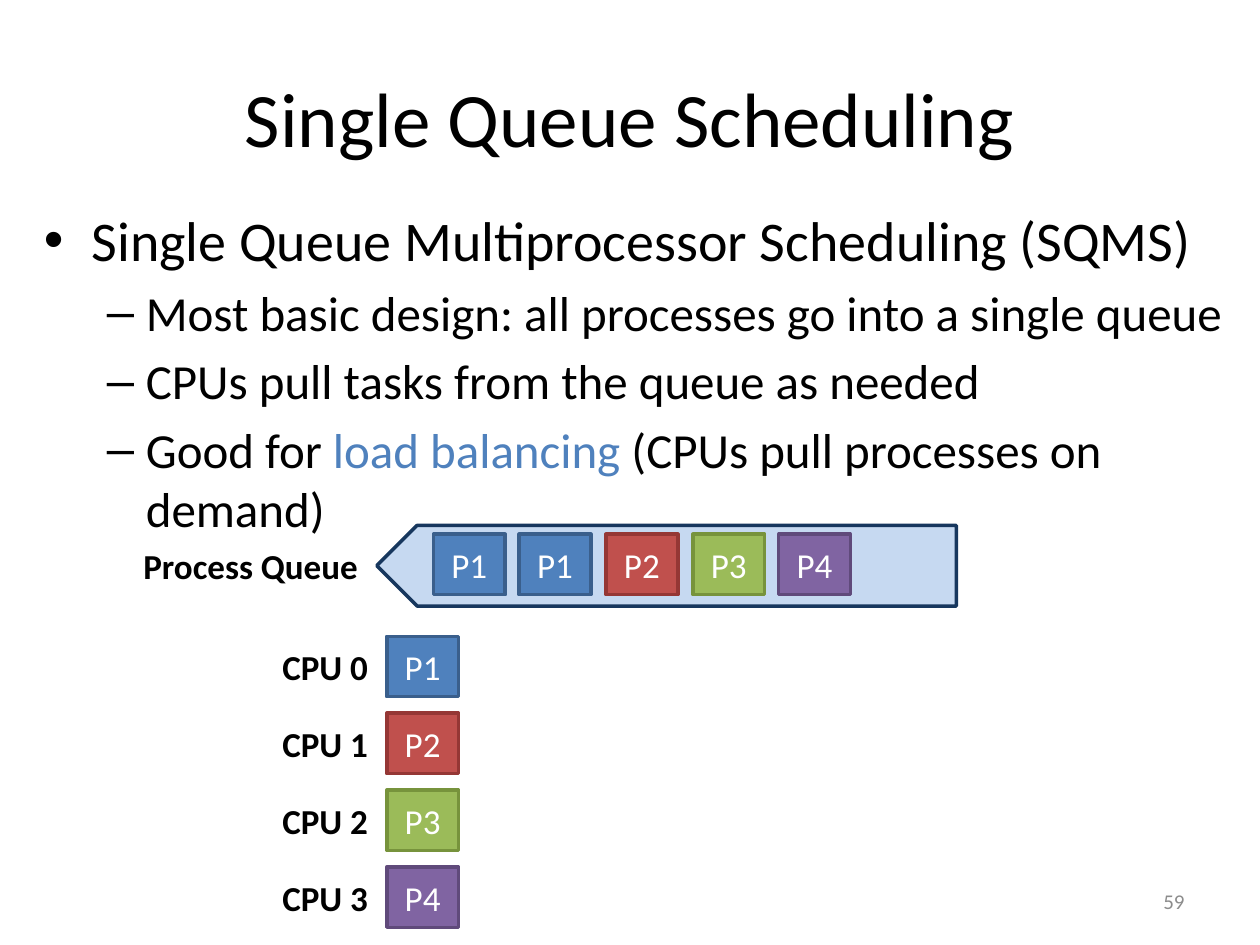
import pptx
import pptx.util
import pptx.dml.color
import pptx.enum.shapes
import pptx.enum.text
import lxml.etree

Inches = pptx.util.Inches
Pt = pptx.util.Pt
Shape = pptx.enum.shapes.MSO_SHAPE
Align = pptx.enum.text.PP_ALIGN
Anchor = pptx.enum.text.MSO_ANCHOR
rgb = pptx.dml.color.RGBColor.from_string

hues = {"black": "000000", "white": "FFFFFF", "grey": "8C8C8C", "blue": "4F81BD",
        "queue": "C6D9F1", "navy": "17375E"}
jobs = {"P1": ("4F81BD", "3A5F8C"), "P2": ("C0504D", "953735"),
        "P3": ("9BBB59", "77933C"), "P4": ("8064A2", "604A7B")}

deck = pptx.Presentation()
deck.slide_width, deck.slide_height = Inches(10), Inches(7.5)
slide = deck.slides.add_slide(deck.slide_layouts[5])
shapes = slide.shapes


def write(para, text, size, hue="black", bold=False):
    run = para.add_run()
    run.text = text
    run.font.name = "Calibri"
    run.font.size = Pt(size)
    run.font.bold = bold
    run.font.color.rgb = rgb(hues[hue])


def block(kind, left, top, width, height, fill, edge):
    shape = shapes.add_shape(kind, Inches(left), Inches(top), Inches(width), Inches(height))
    shape.shadow.inherit = False
    shape.fill.solid()
    shape.fill.fore_color.rgb = rgb(fill)
    shape.line.color.rgb = rgb(edge)
    shape.line.width = Pt(2)
    return shape


title = shapes.title
title.left, title.top = Inches(0.5), Inches(0.3)
title.width, title.height = Inches(9), Inches(1.25)
title.text_frame.vertical_anchor = Anchor.MIDDLE
title.text_frame.paragraphs[0].alignment = Align.CENTER
write(title.text_frame.paragraphs[0], "Single Queue Scheduling", 44)

points = [
    (0, [("Single Queue Multiprocessor Scheduling (SQMS)", "black")]),
    (1, [("Most basic design: all processes go into a single queue", "black")]),
    (1, [("CPUs pull tasks from the queue as needed", "black")]),
    (1, [("Good for ", "black"), ("load balancing ", "blue"),
         ("(CPUs pull processes on demand)", "black")]),
]
levels = [(32, "•", 0.38, -0.38), (28, "–", 0.81, -0.31)]
body = shapes.add_textbox(Inches(0.25), Inches(1.58), Inches(9.57), Inches(2.6)).text_frame
body.word_wrap = True
for i, (level, runs) in enumerate(points):
    para = body.add_paragraph() if i else body.paragraphs[0]
    size, mark, left, indent = levels[level]
    para.level = level
    para.space_before = Pt(size * 0.2)
    props = para._p.get_or_add_pPr()
    props.set("marL", str(Inches(left)))
    props.set("indent", str(Inches(indent)))
    font = lxml.etree.SubElement(props, pptx.oxml.ns.qn("a:buFont"))
    font.set("typeface", "Arial")
    bullet = lxml.etree.SubElement(props, pptx.oxml.ns.qn("a:buChar"))
    bullet.set("char", mark)
    for text, hue in runs:
        write(para, text, size, hue)

queue = block(Shape.PENTAGON, 2.99, 4.17, 4.6, 0.64, hues["queue"], hues["navy"])
queue.rotation = 180

row, step = 5.05, 0.61
labels = [("Process Queue", 1.02, 4.27, 1.92, 0.44, 20, "black", True),
          ("59", 7.17, 6.95, 2.33, 0.4, 12, "grey", False)]
labels += [(f"CPU {n}", 2.13, row + 0.02 + n * step, 0.89, 0.44, 20, "black", True)
           for n in range(4)]
for text, left, top, width, height, size, hue, bold in labels:
    frame = shapes.add_textbox(Inches(left), Inches(top), Inches(width), Inches(height)).text_frame
    frame.word_wrap = False
    frame.vertical_anchor = Anchor.MIDDLE
    frame.paragraphs[0].alignment = Align.RIGHT
    write(frame.paragraphs[0], text, size, hue, bold)

tiles = [(job, 3.44 + n * 0.685, 4.24)
         for n, job in enumerate(["P1", "P1", "P2", "P3", "P4"])]
tiles += [(job, 3.07, row + n * step) for n, job in enumerate(jobs)]
for job, left, top in tiles:
    frame = block(Shape.RECTANGLE, round(left, 2), top, 0.57, 0.48, *jobs[job]).text_frame
    frame.vertical_anchor = Anchor.MIDDLE
    frame.paragraphs[0].alignment = Align.CENTER
    write(frame.paragraphs[0], job, 20, "white")

deck.save("out.pptx")
